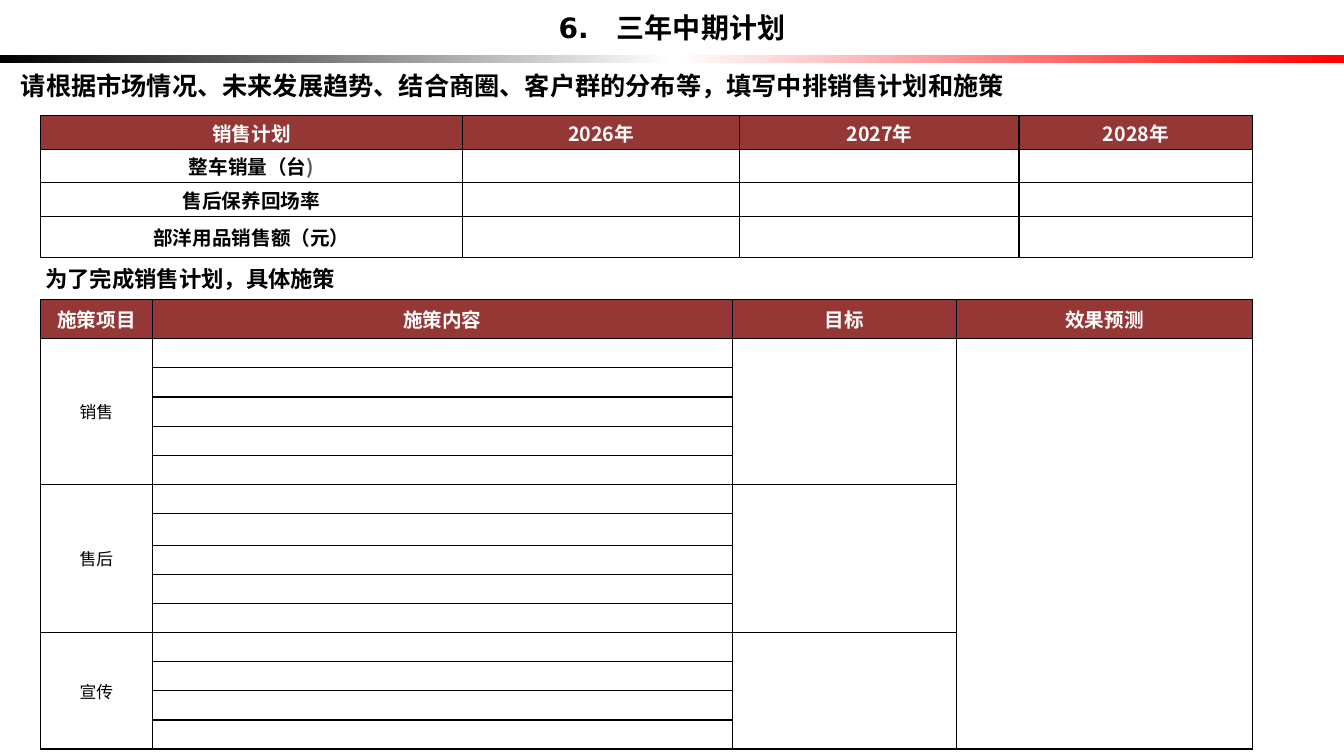
from lxml import etree
from pptx import Presentation
from pptx.dml.color import RGBColor
from pptx.enum.shapes import MSO_SHAPE
from pptx.enum.text import MSO_ANCHOR, PP_ALIGN
from pptx.oxml import parse_xml
from pptx.oxml.ns import qn
from pptx.util import Pt

CENTER = PP_ALIGN.CENTER
MIDDLE = MSO_ANCHOR.MIDDLE
RECTANGLE = MSO_SHAPE.RECTANGLE
NAMESPACE = "http://schemas.openxmlformats.org/drawingml/2006/main"
COLORS = {
    "black": "000000",
    "white": "FFFFFF",
    "red": "FF0000",
    "header": "953735",
    "gray": "595959",
}
CJK = "Noto Sans CJK SC"
HEADING = "DejaVu Sans"
BODY = "Arial"
TABLE_LEFT = 28.8


def style_span(span, size, font, color="black", bold=True):
    span.font.size = Pt(size)
    span.font.bold = bold
    span.font.name = font
    span.font.color.rgb = RGBColor.from_string(COLORS[color])
    east_asian = etree.SubElement(span.font._element, qn("a:ea"))
    east_asian.set("typeface", CJK)


def add_title(page, text, left, top, width, height):
    title = page.shapes.title
    title.left, title.top, title.width, title.height = map(Pt, (left, top, width, height))
    frame = title.text_frame
    frame.text = text
    frame.vertical_anchor = MIDDLE
    para = frame.paragraphs[0]
    para.alignment = CENTER
    para.line_spacing = 0.9
    style_span(para.runs[0], 20, HEADING)


def add_gradient_bar(page, left, top, width, height):
    bar = page.shapes.add_shape(RECTANGLE, *map(Pt, (left, top, width, height)))
    bar.shadow.inherit = False
    bar.line.fill.background()
    stops = "".join(
        f'<a:gs pos="{position * 1000}"><a:srgbClr val="{COLORS[name]}"/></a:gs>'
        for position, name in ((0, "black"), (50, "white"), (100, "red"))
    )
    gradient = parse_xml(
        f'<a:gradFill xmlns:a="{NAMESPACE}" rotWithShape="1">'
        f'<a:gsLst>{stops}</a:gsLst><a:lin ang="0" scaled="0"/></a:gradFill>'
    )
    bar._element.spPr.find(qn("a:prstGeom")).addnext(gradient)


def add_heading(page, text, left, top, width, height, size, font, wrap):
    box = page.shapes.add_textbox(*map(Pt, (left, top, width, height)))
    frame = box.text_frame
    frame.word_wrap = wrap
    frame.vertical_anchor = MIDDLE
    frame.text = text
    style_span(frame.paragraphs[0].runs[0], size, font)


def add_borders(cell):
    properties = cell._tc.get_or_add_tcPr()
    for index, side in enumerate(("lnL", "lnR", "lnT", "lnB")):
        properties.insert(index, parse_xml(
            f'<a:{side} xmlns:a="{NAMESPACE}" w="12700"><a:solidFill>'
            f'<a:srgbClr val="{COLORS["black"]}"/></a:solidFill></a:{side}>'
        ))


def add_grid(page, left, top, columns, rows, headers):
    frame = page.shapes.add_table(
        len(rows), len(columns), Pt(left), Pt(top), Pt(sum(columns)), Pt(sum(rows))
    )
    table = frame.table
    table.first_row = table.horz_banding = False
    for column, width in zip(table.columns, columns):
        column.width = Pt(width)
    for row, height in zip(table.rows, rows):
        row.height = Pt(height)
    for cell in table.iter_cells():
        cell.margin_left = cell.margin_right = cell.margin_top = cell.margin_bottom = Pt(0)
        cell.fill.background()
        add_borders(cell)
        ending = etree.SubElement(cell.text_frame.paragraphs[0]._p, qn("a:endParaRPr"))
        ending.set("sz", "1000")
    for column, text in enumerate(headers):
        cell = table.cell(0, column)
        fill_cell(cell, text, 14, CJK, "white")
        cell.fill.solid()
        cell.fill.fore_color.rgb = RGBColor.from_string(COLORS["header"])
    return table


def fill_cell(cell, text, size, font, color="black", bold=True):
    cell.vertical_anchor = MIDDLE
    cell.text_frame.text = text
    para = cell.text_frame.paragraphs[0]
    para.alignment = CENTER
    style_span(para.runs[0], size, font, color, bold)


def add_sales_plan(page, left, top):
    years = [f"{year}年" for year in range(2026, 2029)]
    table = add_grid(
        page, left, top, [301.7, 198, 199.4, 167], [24, 24, 24, 29.3], ["销售计划", *years]
    )
    labels = ("整车销量（台", "售后保养回场率", "部洋用品销售额（元）")
    for row, label in enumerate(labels, 1):
        fill_cell(table.cell(row, 0), label, 14, CJK)
    span = table.cell(1, 0).text_frame.paragraphs[0].add_run()
    span.text = ")"
    style_span(span, 14, CJK, "gray")


def add_measures(page, left, top):
    rows = [28.2] + [20.83] * 14
    rows[7] = 22.6
    headers = ("施策项目", "施策内容", "目标", "效果预测")
    table = add_grid(page, left, top, [80.2, 414, 160, 211.9], rows, headers)
    first = 1
    for label, count in (("销售", 5), ("售后", 5), ("宣传", 4)):
        last = first + count - 1
        for column in (0, 2):
            table.cell(first, column).merge(table.cell(last, column))
        fill_cell(table.cell(first, 0), label, 12, BODY, bold=False)
        first = last + 1
    table.cell(1, 3).merge(table.cell(len(rows) - 1, 3))


def main():
    deck = Presentation()
    deck.slide_width, deck.slide_height = Pt(960), Pt(540)
    page = deck.slides.add_slide(deck.slide_layouts[5])
    add_gradient_bar(page, 0, 39, 960, 5.8)
    add_title(page, "6.\u3000三年中期计划".replace("\u3000", "　"), 0, 0, 960, 41.8)
    add_heading(
        page, "请根据市场情况、未来发展趋势、结合商圈、客户群的分布等，填写中排销售计划和施策",
        7.9, 46.8, 723.6, 29, 18, HEADING, False,
    )
    add_sales_plan(page, TABLE_LEFT, 82.6)
    add_heading(page, "为了完成销售计划，具体施策", 25.2, 185.8, 480, 26, 16, CJK, True)
    add_measures(page, TABLE_LEFT, 213.8)
    deck.save("out.pptx")


if __name__ == "__main__":
    main()
